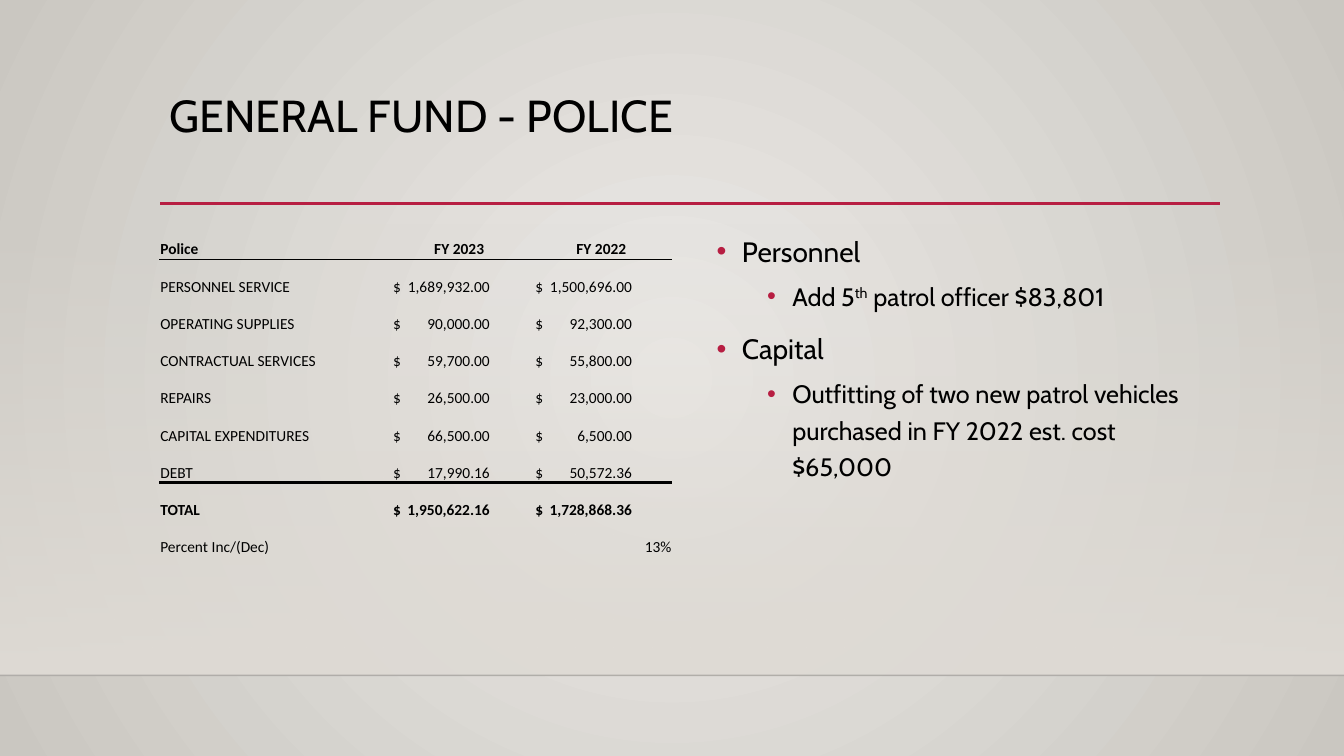
from pptx import Presentation
from pptx.dml.color import RGBColor
from pptx.enum.shapes import MSO_CONNECTOR, MSO_SHAPE
from pptx.enum.text import MSO_ANCHOR, PP_ALIGN
from pptx.oxml import parse_xml
from pptx.oxml.ns import nsdecls, qn
from pptx.util import Inches, Pt

BLACK = RGBColor(0x00, 0x00, 0x00)
RED = RGBColor(0xB7, 0x1E, 0x42)
SHADE = RGBColor(0x00, 0x00, 0x01)
CENTRE = RGBColor(0xEC, 0xEA, 0xE7)
EDGE = RGBColor(0xCA, 0xC7, 0xC1)
FLOOR = RGBColor(0xDF, 0xDB, 0xD5)

RADIAL = ('<a:path path="circle"><a:fillToRect l="50000" t="50000" '
          'r="50000" b="50000"/></a:path>')
DOWNWARD = '<a:lin ang="5400000" scaled="0"/>'
PLAIN_TABLE = "{2D5ABB26-0587-4C30-8999-92F81FD0307C}"

BUDGET = [
    ("Police", "FY 2023", "FY 2022"),
    ("PERSONNEL SERVICE", "1,689,932.00", "1,500,696.00"),
    ("OPERATING SUPPLIES", "90,000.00", "92,300.00"),
    ("CONTRACTUAL SERVICES", "59,700.00", "55,800.00"),
    ("REPAIRS", "26,500.00", "23,000.00"),
    ("CAPITAL EXPENDITURES", "66,500.00", "6,500.00"),
    ("DEBT", "17,990.16", "50,572.36"),
    ("TOTAL", "1,950,622.16", "1,728,868.36"),
    ("Percent Inc/(Dec)", "", "13%"),
]
HEADER, DEBT, TOTAL, PERCENT = 0, 6, 7, 8
RULES = {HEADER: 0.5, DEBT: 2}

NOTES = [
    (0, [("Personnel", 0)]),
    (1, [("Add 5", 0), ("th", 30000), (" patrol officer $83,801", 0)]),
    (0, [("Capital", 0)]),
    (1, [("Outfitting of two new patrol vehicles purchased in FY 2022 "
          "est. cost $65,000", 0)]),
]
LEVELS = [
    {"size": 20, "indent": 0.25, "before": 10},
    {"size": 18, "indent": 0.75, "before": 5},
]


def set_format(obj, values):
    """Set each named attribute of an object."""
    for name, value in values.items():
        setattr(obj, name, value)


def add_run(p, text, size, name, bold=False):
    """Append a black run to a paragraph and return it."""
    r = p.add_run()
    r.text = text
    set_format(r.font, {"size": Pt(size), "name": name, "bold": bold})
    r.font.color.rgb = BLACK
    return r


def paint_gradient(fill, owner, stops, direction):
    """Give a fill a two-stop gradient of (colour, opacity) pairs."""
    fill.gradient()
    old = next(owner.iter(qn("a:gradFill")))
    marks = "".join(
        f'<a:gs pos="{i * 100000}"><a:srgbClr val="{color}">'
        f'<a:alpha val="{opacity * 1000}"/></a:srgbClr></a:gs>'
        for i, (color, opacity) in enumerate(stops))
    old.getparent().replace(old, parse_xml(
        f'<a:gradFill {nsdecls("a")} rotWithShape="1">'
        f'<a:gsLst>{marks}</a:gsLst>{direction}</a:gradFill>'))


def add_backdrop(s):
    """Paint the background and the floor panel."""
    paint_gradient(s.background.fill, s.background._cSld,
                   [(CENTRE, 100), (EDGE, 100)], RADIAL)
    panel = s.shapes.add_shape(MSO_SHAPE.RECTANGLE, 0, Inches(2.21),
                               Inches(13.33), Inches(4.49))
    panel.shadow.inherit = False
    panel.line.fill.background()
    paint_gradient(panel.fill, panel._element,
                   [(FLOOR, 0), (FLOOR, 100)], DOWNWARD)


def add_rule(s, left, right, y, color, width, opacity=100):
    """Draw a horizontal line."""
    line = s.shapes.add_connector(MSO_CONNECTOR.STRAIGHT, Inches(left),
                                  Inches(y), Inches(right), Inches(y))
    line.line.color.rgb = color
    line.line.width = Pt(width)
    tint = next(line._element.spPr.iter(qn("a:srgbClr")))
    tint.append(parse_xml(
        f'<a:alpha {nsdecls("a")} val="{opacity * 1000}"/>'))
    line._element.spPr.append(parse_xml(f'<a:effectLst {nsdecls("a")}/>'))


def add_text_box(s, left, top, width, height):
    """Add a wrapping text box and return its text frame."""
    box = s.shapes.add_textbox(Inches(left), Inches(top),
                               Inches(width), Inches(height))
    tf = box.text_frame
    tf.word_wrap = True
    return tf


def add_title(s, text):
    """Add the slide title."""
    p = add_text_box(s, 1.58, 0.88, 10.5, 1.16).paragraphs[0]
    p.line_spacing = 0.9
    add_run(p, text, 32, "Cabin")


def add_notes(s):
    """Add the two-level bullet list."""
    tf = add_text_box(s, 7.01, 2.21, 5.08, 3.76)
    for i, (level, runs) in enumerate(NOTES):
        style = LEVELS[level]
        p = tf.add_paragraph() if i else tf.paragraphs[0]
        pPr = p._p.get_or_add_pPr()
        pPr.set("marL", str(Inches(style["indent"])))
        pPr.set("indent", str(Inches(-0.25)))
        pPr.append(parse_xml(f'<a:buClr {nsdecls("a")}>'
                             f'<a:srgbClr val="{RED}"/></a:buClr>'))
        pPr.append(parse_xml(f'<a:buFont {nsdecls("a")} typeface="Arial"/>'))
        pPr.append(parse_xml(f'<a:buChar {nsdecls("a")} char="•"/>'))
        set_format(p, {"level": level, "line_spacing": 1.2,
                       "space_before": Pt(style["before"] if i else 0)})
        for text, baseline in runs:
            r = add_run(p, text, style["size"], "Cabin")
            if baseline:
                r.font._element.set("baseline", str(baseline))


def fill_cell(cell, row, col, text):
    """Write one budget cell with its alignment and bottom border."""
    amount = col > 0 and HEADER < row < PERCENT
    set_format(cell, {"margin_left": Inches(0.05 if amount else 0.01),
                      "margin_right": Inches(0.01),
                      "margin_top": Inches(0.01), "margin_bottom": 0,
                      "vertical_anchor": MSO_ANCHOR.BOTTOM})
    cell.fill.background()
    p = cell.text_frame.paragraphs[0]
    if amount:
        p._p.get_or_add_pPr().append(parse_xml(
            f'<a:tabLst {nsdecls("a")}>'
            f'<a:tab pos="{Inches(0.96)}" algn="r"/></a:tabLst>'))
        text = f"$\t{text}"
    elif col and row == HEADER:
        p.alignment = PP_ALIGN.CENTER
    elif col:
        p.alignment = PP_ALIGN.RIGHT
    if text:
        add_run(p, text, 11, "Calibri", row in (HEADER, TOTAL))
    if row in RULES:
        cell._tc.get_or_add_tcPr().insert(0, parse_xml(
            f'<a:lnB {nsdecls("a")} w="{Pt(RULES[row])}"><a:solidFill>'
            f'<a:srgbClr val="{BLACK}"/></a:solidFill></a:lnB>'))


def add_budget(s):
    """Add the police budget table."""
    table = s.shapes.add_table(len(BUDGET), 3, Inches(1.58), Inches(2.2),
                               Inches(5.08), Inches(3.33)).table
    set_format(table, {"first_row": False, "horz_banding": False})
    next(table._tbl.iter(qn("a:tableStyleId"))).text = PLAIN_TABLE
    for column, width in zip(table.columns, (2.27, 1.41, 1.41)):
        column.width = Inches(width)
    for row, texts in enumerate(BUDGET):
        table.rows[row].height = Inches(0.37)
        for col, text in enumerate(texts):
            fill_cell(table.cell(row, col), row, col, text)


def main():
    """Build and save the slide."""
    prs = Presentation()
    set_format(prs, {"slide_width": Inches(13.33),
                     "slide_height": Inches(7.5)})
    s = prs.slides.add_slide(prs.slide_layouts[6])
    add_backdrop(s)
    add_rule(s, 0, 13.33, 6.7, SHADE, 1, 20)
    add_rule(s, 1.59, 12.1, 2.02, RED, 2.5)
    add_title(s, "GENERAL FUND - POLICE")
    add_budget(s)
    add_notes(s)
    prs.save("out.pptx")


if __name__ == "__main__":
    main()
